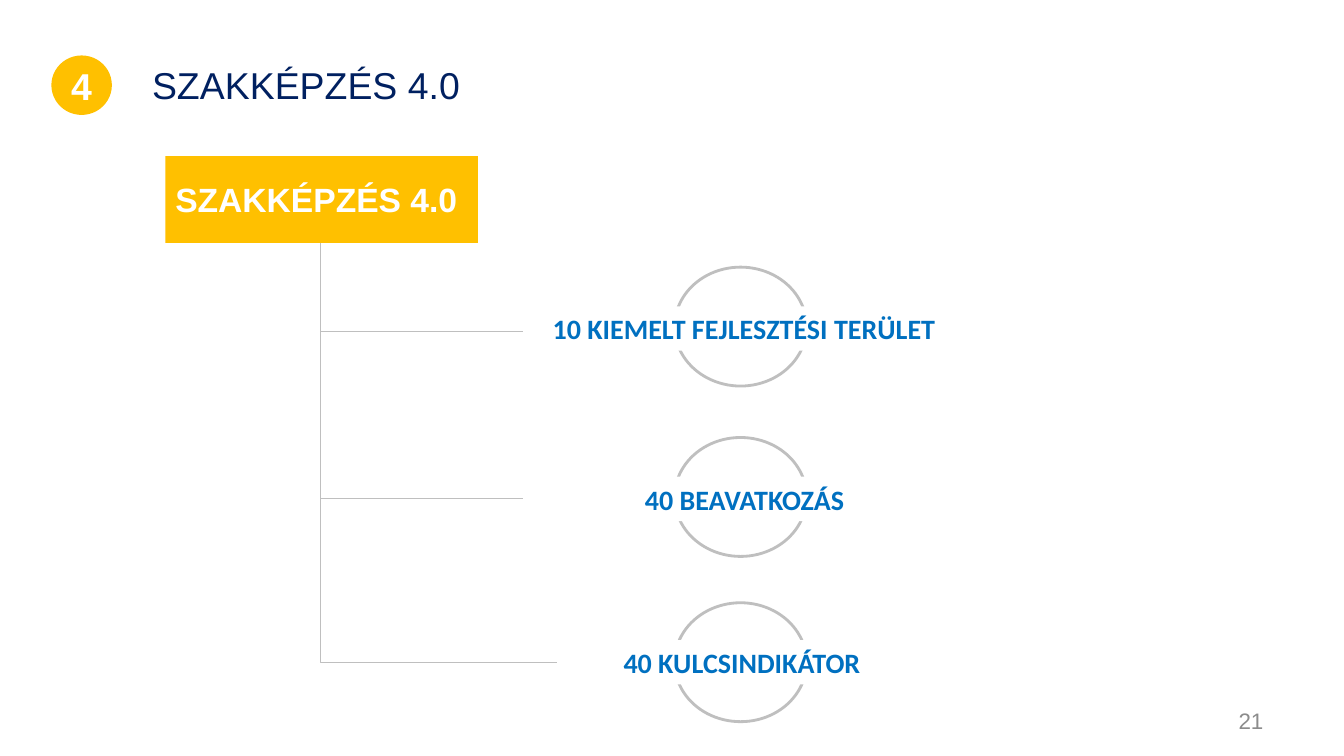
from dataclasses import dataclass

from lxml.etree import SubElement
from pptx import Presentation
from pptx.dml.color import RGBColor
from pptx.enum.shapes import MSO_CONNECTOR, MSO_SHAPE
from pptx.enum.text import MSO_ANCHOR, PP_ALIGN
from pptx.oxml.ns import qn
from pptx.shapes.base import BaseShape
from pptx.util import Inches, Pt

COLORS = {
    "amber": "FFC000",
    "navy": "002060",
    "blue": "0070C0",
    "silver": "BFBFBF",
    "gray": "8C8C8C",
    "white": "FFFFFF",
}
TRUNK_X = 3.18
CIRCLE_LEFT, CIRCLE_WIDTH, CIRCLE_HEIGHT = 6.69, 1.31, 1.18
LABEL_HEIGHT = 0.44


@dataclass(frozen=True)
class Branch:
    text: str
    circle_top: float
    label_left: float
    label_top: float
    label_width: float
    line_end: tuple[float, float]
    right_inset: float = 0.1


BRANCHES = [
    Branch("10 KIEMELT FEJLESZTÉSI TERÜLET", 2.65, 4.96, 3.04, 4.84, (5.19, 3.29)),
    Branch("40 BEAVATKOZÁS", 4.34, 5.19, 4.73, 4.39, (5.19, 4.95)),
    Branch("40 KULCSINDIKÁTOR", 5.98, 5.52, 6.35, 3.88, (5.52, 6.57), 0.3),
]


def color(name: str) -> RGBColor:
    return RGBColor.from_string(COLORS[name])


def write(shape: BaseShape, text: str, *, size: float, ink: str,
          font: str = "Arial", bold: bool = False,
          align: PP_ALIGN = PP_ALIGN.LEFT,
          anchor: MSO_ANCHOR = MSO_ANCHOR.MIDDLE,
          spacing: float = 1.0, right_inset: float = 0.1) -> None:
    frame = shape.text_frame
    frame.word_wrap = True
    frame.vertical_anchor = anchor
    frame.margin_right = Inches(right_inset)
    para = frame.paragraphs[0]
    para.alignment = align
    para.line_spacing = spacing
    span = para.add_run()
    span.text = text
    span.font.name = font
    span.font.size = Pt(size)
    span.font.bold = bold
    span.font.color.rgb = color(ink)


def add_figure(page, kind: MSO_SHAPE, left: float, top: float, width: float,
               height: float, *, fill: str, outline: str | None = None) -> BaseShape:
    figure = page.shapes.add_shape(
        kind, Inches(left), Inches(top), Inches(width), Inches(height))
    figure.shadow.inherit = False
    figure.fill.solid()
    figure.fill.fore_color.rgb = color(fill)
    if outline:
        figure.line.color.rgb = color(outline)
        figure.line.width = Pt(2)
    else:
        figure.line.fill.background()
    return figure


def add_text(page, left: float, top: float, width: float, height: float,
             text: str, **style) -> None:
    box = page.shapes.add_textbox(
        Inches(left), Inches(top), Inches(width), Inches(height))
    write(box, text, **style)


def add_elbow(page, start: tuple[float, float], end: tuple[float, float]) -> None:
    """Draw a line that drops from start, then runs level to end."""
    elbow = page.shapes.add_connector(
        MSO_CONNECTOR.ELBOW, *map(Inches, start + end))
    elbow.line.color.rgb = color("silver")
    elbow.line.width = Pt(0.75)
    properties = elbow._element.spPr
    adjustments = properties.find(qn("a:prstGeom")).get_or_add_avLst()
    SubElement(adjustments, qn("a:gd"), name="adj1", fmla="val 0")
    SubElement(properties, qn("a:effectLst"))


def add_branch(page, branch: Branch) -> None:
    add_figure(page, MSO_SHAPE.OVAL, CIRCLE_LEFT, branch.circle_top,
               CIRCLE_WIDTH, CIRCLE_HEIGHT, fill="white", outline="silver")
    label = add_figure(page, MSO_SHAPE.RECTANGLE, branch.label_left, branch.label_top,
                       branch.label_width, LABEL_HEIGHT, fill="white")
    write(label, branch.text, size=20, ink="blue", font="Calibri", bold=True,
          align=PP_ALIGN.CENTER, right_inset=branch.right_inset)


def main() -> None:
    deck = Presentation()
    deck.slide_width, deck.slide_height = Inches(13.33), Inches(7.5)
    page = deck.slides.add_slide(deck.slide_layouts[6])

    add_text(page, 9.55, 6.95, 3.11, 0.4, "21", size=16, ink="gray",
             align=PP_ALIGN.RIGHT, right_inset=0.13)
    add_text(page, 1.41, 0.62, 11.7, 0.45, "SZAKKÉPZÉS 4.0", size=26.7,
             ink="navy", anchor=MSO_ANCHOR.TOP, spacing=0.9)
    badge = add_figure(page, MSO_SHAPE.OVAL, 0.51, 0.55, 0.6, 0.59, fill="amber")
    write(badge, "4", size=26.7, ink="white", bold=True, align=PP_ALIGN.CENTER)

    for branch in BRANCHES:
        add_branch(page, branch)
    for branch in BRANCHES:
        add_elbow(page, (TRUNK_X, 2.33), branch.line_end)

    root = add_figure(page, MSO_SHAPE.RECTANGLE, 1.64, 1.55, 3.1, 0.86, fill="amber")
    write(root, "SZAKKÉPZÉS 4.0", size=24, ink="white", bold=True)

    deck.save("out.pptx")


if __name__ == "__main__":
    main()
